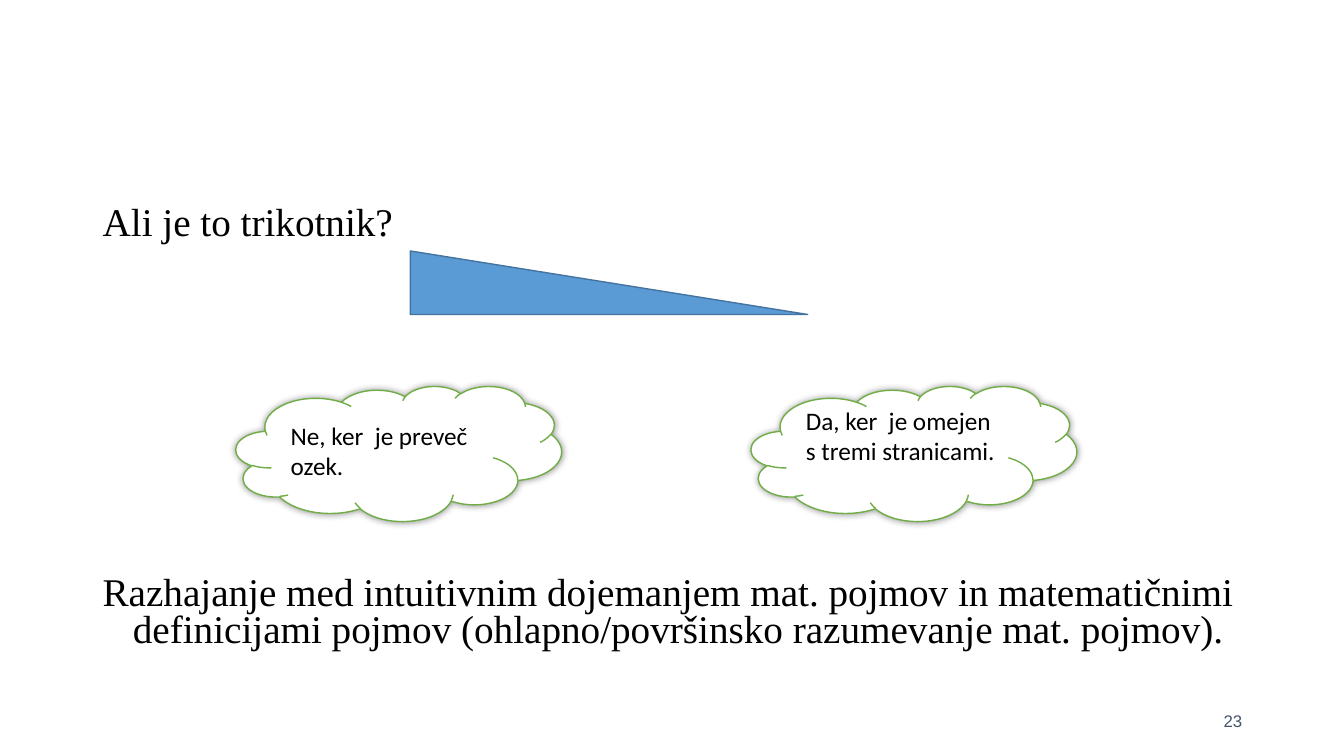
from lxml import etree
from pptx import Presentation
from pptx import util as u
from pptx.dml.color import RGBColor
from pptx.enum import shapes, text
from pptx.oxml import ns

# Content
QUESTION = "Ali je to trikotnik?"
CONCLUSION = ("Razhajanje med intuitivnim dojemanjem mat. pojmov in matematičnimi "
              "definicijami pojmov (ohlapno/površinsko razumevanje mat. pojmov).")
# Answer, left edge, bottom inset that lifts the text
ANSWERS = [
    ("Ne, ker  je preveč ozek.", 2.34, 0.05),
    ("Da, ker  je omejen s tremi stranicami.", 7.45, 0.35),
]
PAGE_NUMBER = "23"


def color(value):
    return RGBColor.from_string(value)


def inches(*lengths):
    return [u.Inches(length) for length in lengths]


def set_font(paragraph, name, size, value):
    paragraph.font.name = name
    paragraph.font.size = u.Pt(size)
    paragraph.font.color.rgb = color(value)


def add_text(box, anchor):
    frame = slide.shapes.add_textbox(*inches(*box)).text_frame
    frame.word_wrap = True
    frame.vertical_anchor = anchor
    return frame


def add_shape(kind, box, fill, line):
    shape = slide.shapes.add_shape(kind, *inches(*box))
    shape.shadow.inherit = False
    shape.fill.solid()
    shape.fill.fore_color.rgb = color(fill)
    shape.line.color.rgb = color(line)
    shape.line.width = u.Pt(1)
    return shape


def add_glow_shadow(shape):
    effects = shape._element.spPr.find(ns.qn("a:effectLst"))
    shadow = etree.SubElement(effects, ns.qn("a:outerShdw"), blurRad=str(u.Pt(5)),
                              dist="0", dir="0", algn="ctr", rotWithShape="0")
    black = etree.SubElement(shadow, ns.qn("a:srgbClr"), val="000000")
    etree.SubElement(black, ns.qn("a:alpha"), val="40000")


presentation = Presentation()
presentation.slide_width, presentation.slide_height = inches(13.33, 7.5)
slide = presentation.slides.add_slide(presentation.slide_layouts[6])

# Question and conclusion, with room between them for the drawing
body = add_text((0.92, 2, 11.5, 4.76), text.MSO_ANCHOR.TOP)
for index, (words, gap) in enumerate([(QUESTION, 0), (CONCLUSION, 237)]):
    paragraph = body.add_paragraph() if index else body.paragraphs[0]
    paragraph.text = words
    paragraph.line_spacing = 0.8
    paragraph.space_before = u.Pt(gap)
    properties = paragraph._p.get_or_add_pPr()
    properties.set("marL", str(u.Inches(0.3)))
    properties.set("indent", str(u.Inches(-0.3)))
    set_font(paragraph, "Times New Roman", 28, "000000")

# Page number
paragraph = add_text((9.42, 6.95, 3, 0.4), text.MSO_ANCHOR.MIDDLE).paragraphs[0]
paragraph.text = PAGE_NUMBER
paragraph.alignment = text.PP_ALIGN.RIGHT
set_font(paragraph, "Arial", 12, "44546A")

# Narrow triangle
add_shape(shapes.MSO_SHAPE.RIGHT_TRIANGLE, (4.07, 2.49, 3.94, 0.63), "5B9BD5", "43739E")

# Answers in clouds
for answer, left, bottom_inset in ANSWERS:
    cloud = add_shape(shapes.MSO_SHAPE.CLOUD, (left, 3.83, 3.23, 1.34), "FFFFFF", "70AD47")
    add_glow_shadow(cloud)
    frame = cloud.text_frame
    frame.word_wrap = True
    frame.vertical_anchor = text.MSO_ANCHOR.MIDDLE
    frame.margin_bottom = u.Inches(bottom_inset)
    paragraph = frame.paragraphs[0]
    paragraph.text = answer
    paragraph.alignment = text.PP_ALIGN.LEFT
    set_font(paragraph, "Calibri", 18, "000000")

presentation.save("out.pptx")
